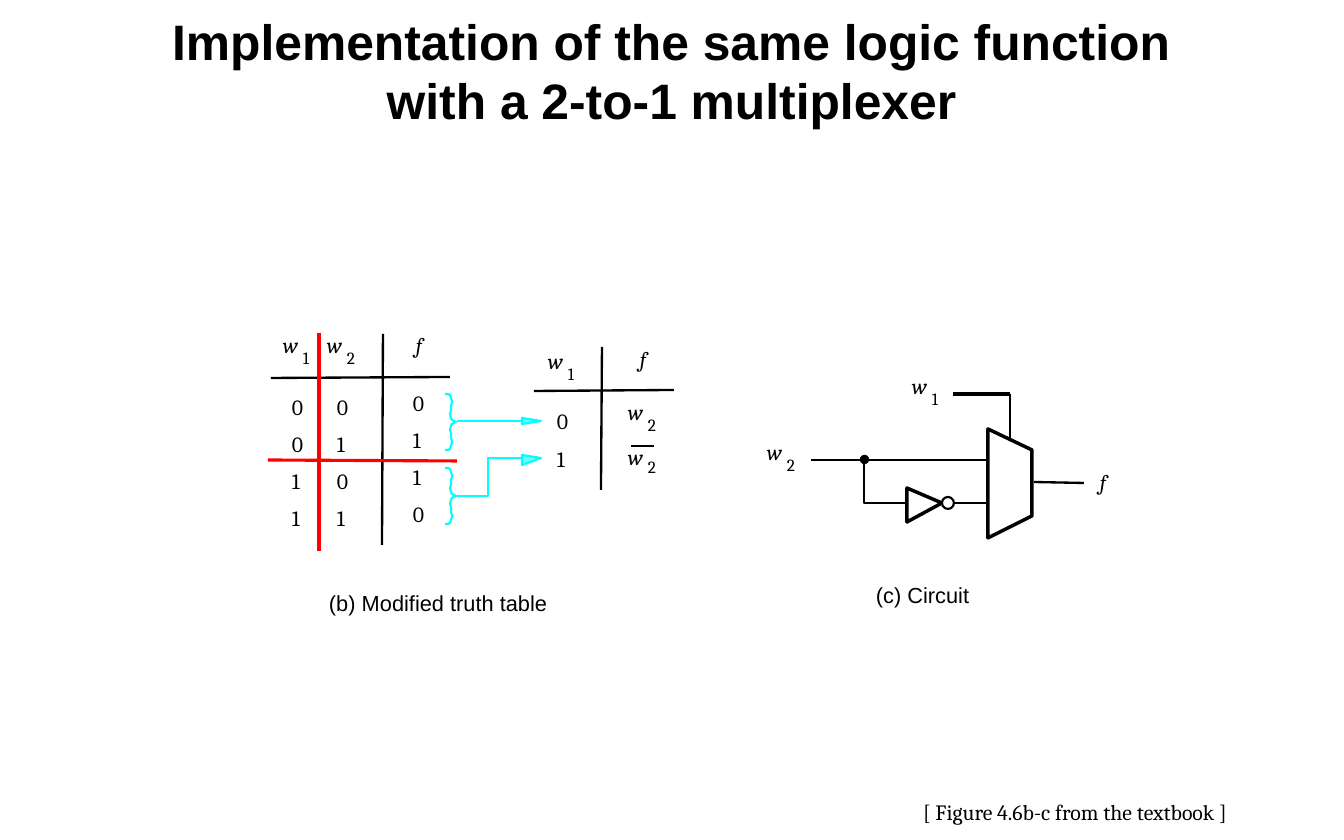
"""Build the slide on a logic function implemented with a 2-to-1 multiplexer."""
from lxml.etree import SubElement
from pptx import Presentation
from pptx.dml.color import RGBColor
from pptx.enum.shapes import MSO_CONNECTOR, MSO_SHAPE
from pptx.enum.text import MSO_ANCHOR, MSO_AUTO_SIZE, PP_ALIGN
from pptx.oxml.ns import qn
from pptx.util import Emu, Pt

EMU_PER_PX = 914400 / 112
BLACK = RGBColor(0, 0, 0)
WHITE = RGBColor(255, 255, 255)
RED = RGBColor(255, 0, 0)
CYAN = RGBColor(0, 255, 255)
PALE_CYAN = RGBColor(0x66, 255, 255)
BRACE_HEIGHT = 56
UPPER_BRACE = [(0, 0), (3, 0), (5, 1), (6, 4), (7, 7), (7, 9), (6, 12),
               (6, 17), (5, 20), (6, 24), (7, 26), (9, 27), (11, 28)]


def px(length):
    """Turn pixels into EMU."""
    return Emu(round(length * EMU_PER_PX))


def add_title(slide, text):
    """Add the centred bold heading."""
    heading = slide.shapes.add_textbox(px(112), px(0), px(1120), px(140))
    frame = heading.text_frame
    frame.word_wrap = True
    frame.vertical_anchor = MSO_ANCHOR.MIDDLE
    line = frame.paragraphs[0]
    line.text = text
    line.alignment = PP_ALIGN.CENTER
    line.font.name, line.font.size, line.font.bold = "Arial", Pt(32), True
    line.font.color.rgb = BLACK


def add_label(slide, text, x, y, width, height=27, size=14, font="Cambria",
              italic=False, inset=True):
    """Add one unwrapped line of text, by default without margins."""
    label = slide.shapes.add_textbox(px(x), px(y), px(width), px(height))
    frame = label.text_frame
    frame.word_wrap = False
    frame.auto_size = MSO_AUTO_SIZE.SHAPE_TO_FIT_TEXT
    if inset:
        frame.margin_left = frame.margin_right = 0
        frame.margin_top = frame.margin_bottom = 0
    line = frame.paragraphs[0]
    line.text = text
    line.font.name, line.font.size, line.font.italic = font, Pt(size), italic
    line.font.color.rgb = BLACK


def add_input(slide, index, x, y, drop=15):
    """Add the variable w with its subscript."""
    add_label(slide, "w", x, y, 21, italic=True)
    add_label(slide, index, x + 20, y + drop, 12, 20, size=11)


def add_output(slide, x, y):
    """Add the function name f."""
    add_label(slide, "f", x, y, 12, italic=True)


def add_column(slide, digits, x, top, pitch):
    """Add a column of truth values."""
    for row, digit in enumerate(digits):
        add_label(slide, digit, x, top + row * pitch, 17)


def add_line(slide, x1, y1, x2, y2, color=BLACK, width=1.5):
    """Add a straight line."""
    wire = slide.shapes.add_connector(
        MSO_CONNECTOR.STRAIGHT, px(x1), px(y1), px(x2), px(y2))
    wire.line.color.rgb = color
    wire.line.width = Pt(width)
    SubElement(wire._element.spPr, qn("a:effectLst"))


def paint(shape, color, width, fill=None):
    """Set the outline and fill of a shape."""
    shape.shadow.inherit = False
    shape.line.color.rgb = color
    shape.line.width = Pt(width)
    if fill is None:
        shape.fill.background()
    else:
        shape.fill.solid()
        shape.fill.fore_color.rgb = fill


def add_outline(slide, points, color=BLACK, width=1.5, fill=None, close=False):
    """Add a path through the points."""
    builder = slide.shapes.build_freeform(*points[0], scale=EMU_PER_PX)
    builder.add_line_segments(points[1:], close=close)
    paint(builder.convert_to_shape(), color, width, fill)


def add_circle(slide, x, y, diameter, fill, width):
    """Add a black-edged circle."""
    circle = slide.shapes.add_shape(
        MSO_SHAPE.OVAL, px(x), px(y), px(diameter), px(diameter))
    paint(circle, BLACK, width, fill)


def add_brace(slide, x, y):
    """Add a cyan brace that joins two table rows."""
    lower = [(dx, BRACE_HEIGHT - dy) for dx, dy in reversed(UPPER_BRACE[:-1])]
    points = [(x + dx, y + dy) for dx, dy in UPPER_BRACE + lower]
    add_outline(slide, points, CYAN, 1.38)


def add_arrowhead(slide, y, above, below):
    """Add a cyan arrowhead that points at the reduced table."""
    points = [(522, y + below), (541, y), (522, y - above)]
    add_outline(slide, points, CYAN, 1.38, PALE_CYAN, close=True)


def add_truth_table(slide):
    """Add the full truth table, split in red."""
    add_line(slide, 450, 377, 271, 378)
    add_line(slide, 382, 545, 383, 334)
    add_input(slide, "1", 283, 332)
    add_input(slide, "2", 327, 332)
    add_output(slide, 416, 332)
    for digits, x, top in (("0011", 292, 394), ("0101", 337, 394),
                           ("0110", 413, 390)):
        add_column(slide, digits, x, top, 37)
    add_line(slide, 319, 333, 319, 551, RED, 2)
    add_line(slide, 268, 460, 457, 461, RED, 2)


def add_reduction(slide):
    """Add the braces and arrows between the two tables."""
    for top in (394, 468):
        add_brace(slide, 445, top)
    add_line(slide, 522, 421, 457, 421, CYAN, 1.38)
    elbow = [(522, 458), (488, 458), (488, 496), (457, 496)]
    add_outline(slide, elbow, CYAN, 1.38)
    add_arrowhead(slide, 421, 3, 3)
    add_arrowhead(slide, 458, 3, 7)


def add_reduced_table(slide):
    """Add the table of f in terms of the second input."""
    add_line(slide, 674, 390, 534, 391)
    add_line(slide, 601, 490, 602, 347)
    add_input(slide, "1", 548, 348)
    add_output(slide, 640, 346)
    add_column(slide, "01", 557, 408, 38)
    add_input(slide, "2", 628, 399)
    add_input(slide, "2", 628, 444, drop=12)
    add_line(slide, 654, 446, 631, 446, width=1.38)


def add_circuit(slide):
    """Add the multiplexer, the inverter and their wires."""
    add_line(slide, 811, 460, 988, 460)
    add_line(slide, 1010, 394, 1010, 438)
    add_line(slide, 1010, 394, 953, 394, width=2.25)
    add_line(slide, 1034, 482, 1084, 483)
    add_line(slide, 953, 503, 988, 503)
    add_outline(slide, [(864, 460), (864, 503), (907, 503)])
    multiplexer = [(1032, 516), (1032, 450), (988, 429), (988, 538)]
    inverter = [(942, 503), (907, 522), (907, 488)]
    for gate in (multiplexer, inverter):
        add_outline(slide, gate, width=2.25, close=True)
    add_circle(slide, 942, 497, 12, WHITE, 1.38)
    add_circle(slide, 860, 455, 9, BLACK, 0.25)
    add_input(slide, "1", 912, 373)
    add_input(slide, "2", 767, 439)
    add_output(slide, 1100, 469)


def main():
    """Build and save the slide."""
    deck = Presentation()
    deck.slide_width, deck.slide_height = px(1344), px(840)
    slide = deck.slides.add_slide(deck.slide_layouts[6])
    add_title(slide, "Implementation of the same logic function\v"
                     "with a 2-to-1 multiplexer")
    add_truth_table(slide)
    add_reduction(slide)
    add_reduced_table(slide)
    add_circuit(slide)
    add_label(slide, "(b) Modified truth table", 329, 590, 225, font="Arial")
    add_label(slide, "(c) Circuit", 876, 582, 100, font="Arial")
    add_label(slide, "[ Figure 4.6b-c from the textbook ]", 912, 793, 329, 38,
              inset=False)
    deck.save("out.pptx")


if __name__ == "__main__":
    main()
